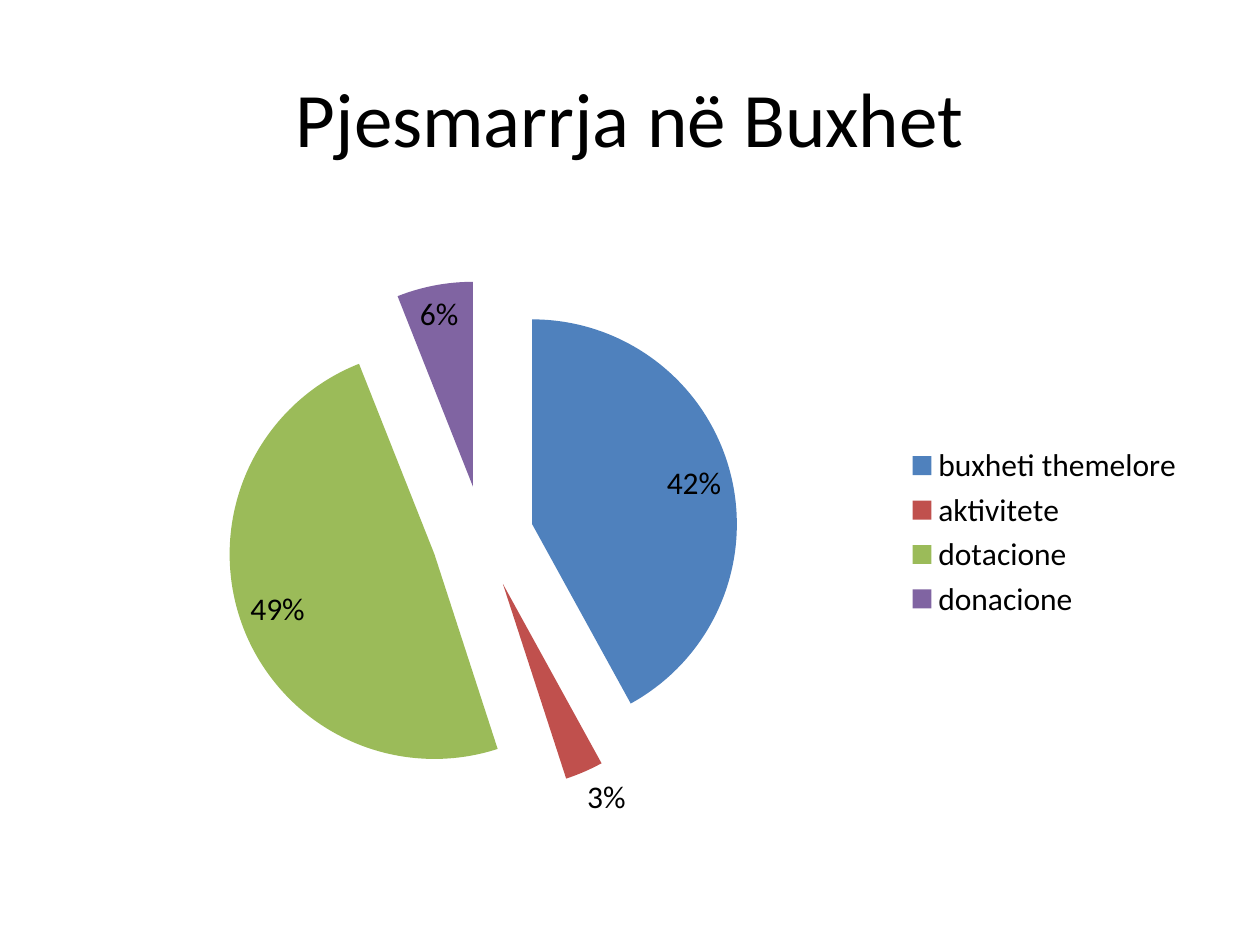
from lxml import etree
from pptx import Presentation
from pptx.chart.data import CategoryChartData
from pptx.dml.color import RGBColor
from pptx.enum.chart import XL_CHART_TYPE, XL_LABEL_POSITION, XL_LEGEND_POSITION
from pptx.enum.text import MSO_ANCHOR, PP_ALIGN
from pptx.oxml.ns import qn
from pptx.util import Inches, Pt

PIE = XL_CHART_TYPE.PIE
BEST_FIT = XL_LABEL_POSITION.BEST_FIT
RIGHT = XL_LEGEND_POSITION.RIGHT
MIDDLE = MSO_ANCHOR.MIDDLE
CENTER = PP_ALIGN.CENTER

BLACK = RGBColor(0x00, 0x00, 0x00)
BLUE = RGBColor(0x4F, 0x81, 0xBD)
RED = RGBColor(0xC0, 0x50, 0x4D)
GREEN = RGBColor(0x9B, 0xBB, 0x59)
PURPLE = RGBColor(0x80, 0x64, 0xA2)
FONT = "Calibri"

TITLE = "Pjesmarrja në Buxhet"
SHARES = [
    ("buxheti themelore", 42, BLUE),
    ("aktivitete", 3, RED),
    ("dotacione", 49, GREEN),
    ("donacione", 6, PURPLE),
]
EXPLOSION = 25


def format_font(font, size, color=BLACK):
    font.name = FONT
    font.size = Pt(size)
    font.color.rgb = color


def write_text(shape, text, size, align=CENTER, anchor=MIDDLE):
    tf = shape.text_frame
    tf.word_wrap = True
    tf.vertical_anchor = anchor
    p = tf.paragraphs[0]
    p.alignment = align
    r = p.add_run()
    r.text = text
    format_font(r.font, size)


def add_budget_pie(s):
    data = CategoryChartData()
    data.categories = [name for name, _, _ in SHARES]
    data.add_series("Series 1", [value for _, value, _ in SHARES])
    frame = s.shapes.add_chart(
        PIE, Inches(0.5), Inches(1.75), Inches(9), Inches(4.95), data)
    chart = frame.chart
    chart.has_title = False
    format_font(chart.font, 18)

    chart.has_legend = True
    chart.legend.position = RIGHT
    chart.legend.include_in_layout = False

    plot = chart.plots[0]
    plot.vary_by_categories = True
    plot.has_data_labels = True
    labels = plot.data_labels
    labels.show_percentage = True
    labels.show_value = False
    labels.number_format = "0%"
    labels.number_format_is_linked = False
    labels.position = BEST_FIT

    series = plot.series[0]
    for i, (_, _, color) in enumerate(SHARES):
        fill = series.points[i].format.fill
        fill.solid()
        fill.fore_color.rgb = color
    explosion = etree.Element(qn("c:explosion"), val=str(EXPLOSION))
    series._element.find(qn("c:dPt")).addprevious(explosion)


def main():
    prs = Presentation()
    prs.slide_width, prs.slide_height = Inches(10), Inches(7.5)
    s = prs.slides.add_slide(prs.slide_layouts[5])
    title = s.shapes.title
    title.left, title.top = Inches(0.5), Inches(0.3)
    title.width, title.height = Inches(9), Inches(1.25)
    write_text(title, TITLE, 44)
    add_budget_pie(s)
    prs.save("out.pptx")


if __name__ == "__main__":
    main()
